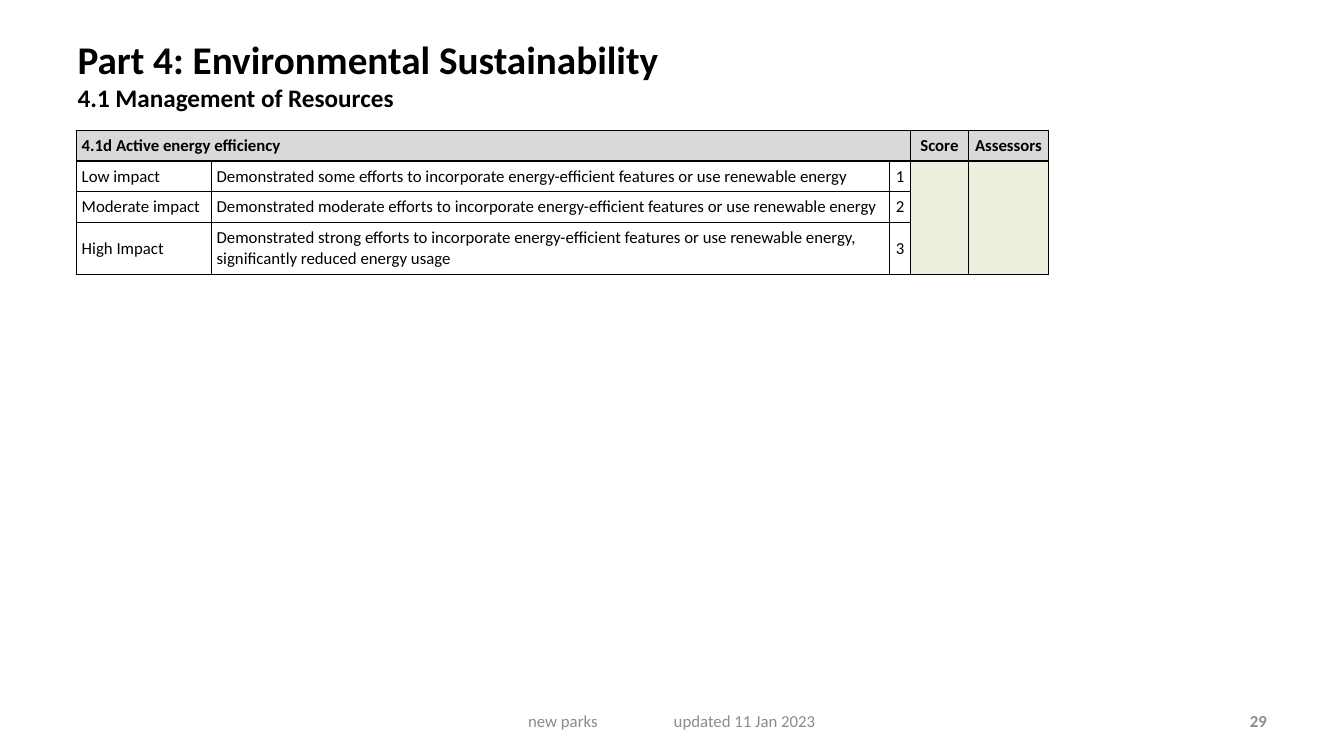
from lxml.etree import SubElement
from pptx import Presentation
from pptx.dml.color import RGBColor
from pptx.enum.text import MSO_ANCHOR as Anchor, PP_ALIGN as Align
from pptx.oxml.ns import qn
from pptx.util import Cm, Pt

FONT = "Calibri"
BLACK, GREY, HEADER, SCORING = "000000", "8C8C8C", "D9D9D9", "EBF1DE"
COLUMN_WIDTHS = [3.4, 17.09, 0.53, 1.45, 2.03]
ROW_HEIGHTS = [0.77, 0.77, 0.77, 1.3]
RATINGS = [
    ["4.1d Active energy efficiency", "", "", "Score", "Assessors"],
    ["Low impact", "Demonstrated some efforts to incorporate "
     "energy-efficient features or use renewable energy", "1", "", ""],
    ["Moderate impact", "Demonstrated moderate efforts to incorporate "
     "energy-efficient features or use renewable energy", "2", "", ""],
    ["High Impact", "Demonstrated strong efforts to incorporate "
     "energy-efficient features or use renewable energy, "
     "significantly reduced energy usage", "3", "", ""],
]


def rgb(color):
    return RGBColor.from_string(color)


def style(paragraph, size, color=BLACK, bold=False, align=Align.LEFT):
    paragraph.alignment = align
    for run in paragraph.runs:
        run.font.name, run.font.size, run.font.bold = FONT, Pt(size), bold
        run.font.color.rgb = rgb(color)


def add_title(slide, heading, subheading):
    title = slide.shapes.title
    title.left, title.top, title.width, title.height = (
        Cm(1.7), Cm(0.76), Cm(26.31), Cm(2.51))
    frame = title.text_frame
    frame.vertical_anchor = Anchor.TOP
    frame.text = f"{heading}\n{subheading}"
    for paragraph, size in zip(frame.paragraphs, (28, 18)):
        style(paragraph, size, bold=True)


def add_footer(slide, text, left, width, bold=False, align=Align.LEFT):
    box = slide.shapes.add_textbox(Cm(left), Cm(17.65), Cm(width), Cm(1.02))
    frame = box.text_frame
    frame.word_wrap = True
    frame.vertical_anchor = Anchor.MIDDLE
    frame.text = text
    style(frame.paragraphs[0], 12, GREY, bold, align)
    return frame


def add_tab_stop(paragraph, position):
    stops = SubElement(paragraph._p.get_or_add_pPr(), qn("a:tabLst"))
    SubElement(stops, qn("a:tab"), pos=str(Cm(position)), algn="l")


def add_borders(cell):
    properties = cell._tc.get_or_add_tcPr()
    for position, side in enumerate(("a:lnL", "a:lnR", "a:lnT", "a:lnB")):
        line = properties.makeelement(qn(side), {"w": str(Pt(1))})
        fill = SubElement(line, qn("a:solidFill"))
        SubElement(fill, qn("a:srgbClr"), val=BLACK)
        properties.insert(position, line)


def format_cell(cell, text, row, column):
    cell.margin_left = cell.margin_right = Cm(0.13)
    cell.margin_top = cell.margin_bottom = Cm(0.13)
    cell.vertical_anchor = Anchor.MIDDLE
    cell.text = text
    paragraph = cell.text_frame.paragraphs[0]
    style(paragraph, 12, bold=row == 0,
          align=Align.CENTER if column >= 2 else Align.LEFT)
    if not text:
        # Keep empty cells from stretching their rows
        SubElement(paragraph._p, qn("a:endParaRPr"), sz="1200")
    if row == 0 or column >= 3:
        cell.fill.solid()
        cell.fill.fore_color.rgb = rgb(HEADER if row == 0 else SCORING)
    else:
        cell.fill.background()
    add_borders(cell)


def add_ratings(slide):
    table = slide.shapes.add_table(
        len(ROW_HEIGHTS), len(COLUMN_WIDTHS), Cm(1.93), Cm(3.28),
        Cm(sum(COLUMN_WIDTHS)), Cm(sum(ROW_HEIGHTS))).table
    table.first_row = table.horz_banding = False
    for column, width in zip(table.columns, COLUMN_WIDTHS):
        column.width = Cm(width)
    for row, height in zip(table.rows, ROW_HEIGHTS):
        row.height = Cm(height)
    for row, texts in enumerate(RATINGS):
        for column, text in enumerate(texts):
            format_cell(table.cell(row, column), text, row, column)
    # Heading across three columns, scoring cells down three rows
    table.cell(0, 0).merge(table.cell(0, 2))
    for column in (3, 4):
        table.cell(1, column).merge(table.cell(3, column))


def main():
    deck = Presentation()
    deck.slide_width, deck.slide_height = Cm(33.87), Cm(19.05)
    slide = deck.slides.add_slide(deck.slide_layouts[5])

    add_title(slide, "Part 4: Environmental Sustainability",
              "4.1 Management of Resources")
    add_ratings(slide)

    # Footer: version note and page number
    version = add_footer(slide, "new parks\tupdated 11 Jan 2023", 11.58, 10.72)
    version.margin_left = Cm(1.73)
    add_tab_stop(version.paragraphs[0], 3.67)
    add_footer(slide, "29", 24.28, 7.9, bold=True, align=Align.RIGHT)

    deck.save("out.pptx")


if __name__ == "__main__":
    main()
